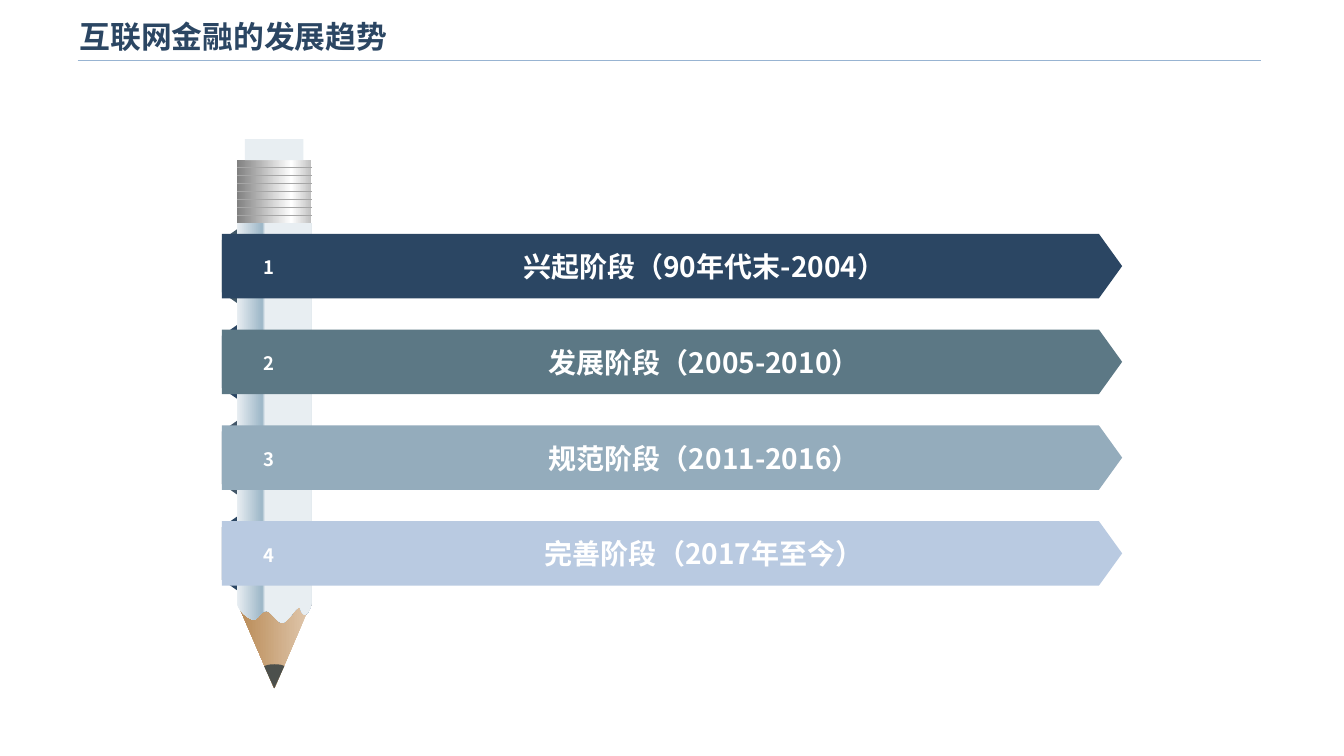
from lxml import etree
from pptx import Presentation
from pptx.dml.color import RGBColor
from pptx.enum.shapes import MSO_CONNECTOR, MSO_SHAPE
from pptx.enum.text import MSO_ANCHOR, MSO_AUTO_SIZE, PP_ALIGN
from pptx.oxml.ns import qn
from pptx.util import Inches, Pt

RECT, PENTAGON, TRAPEZOID = MSO_SHAPE.RECTANGLE, MSO_SHAPE.PENTAGON, MSO_SHAPE.TRAPEZOID
STRAIGHT = MSO_CONNECTOR.STRAIGHT
MIDDLE, LEFT, CENTER = MSO_ANCHOR.MIDDLE, PP_ALIGN.LEFT, PP_ALIGN.CENTER
GROW = MSO_AUTO_SIZE.SHAPE_TO_FIT_TEXT

WHITE = RGBColor(0xFF, 0xFF, 0xFF)
NAVY = RGBColor(0x2B, 0x46, 0x63)
SLATE = RGBColor(0x42, 0x56, 0x68)
DARK_SLATE = RGBColor(0x41, 0x58, 0x67)
TEAL = RGBColor(0x5C, 0x78, 0x85)
STEEL = RGBColor(0x94, 0xAC, 0xBC)
PALE_BLUE = RGBColor(0xB9, 0xCA, 0xE1)
RULE = RGBColor(0x98, 0xB4, 0xD2)
PAINT = RGBColor(0xE8, 0xEE, 0xF2)
SHADE = RGBColor(0x9C, 0xB6, 0xC7)
LIGHT_WOOD = RGBColor(0xE1, 0xC9, 0xAF)
WOOD = RGBColor(0xB8, 0x89, 0x54)
LEAD = RGBColor(0x4C, 0x50, 0x4C)
SILVER = RGBColor(0xBF, 0xBF, 0xBF)
GREY = RGBColor(0x80, 0x80, 0x80)
RIDGE = RGBColor(0xA6, 0xA6, 0xA6)

CJK = "Noto Sans CJK SC"
STAGES = [
    ("兴起阶段（90年代末-2004）", NAVY, DARK_SLATE),
    ("发展阶段（2005-2010）", TEAL, NAVY),
    ("规范阶段（2011-2016）", STEEL, SLATE),
    ("完善阶段（2017年至今）", PALE_BLUE, NAVY),
]


def style(s, color=None):
    s.shadow.inherit = False
    s.line.fill.background()
    if color is not None:
        s.fill.solid()
        s.fill.fore_color.rgb = color


def set_gradient(s, stops, angle):
    """Fill with (percent, colour) stops; the angle runs counter-clockwise."""
    s.fill.gradient()
    s.fill.gradient_angle = angle
    stop_list = next(s.element.iter(qn("a:gsLst")))
    for old in list(stop_list):
        stop_list.remove(old)
    for percent, color in stops:
        stop = etree.SubElement(stop_list, qn("a:gs"), pos=str(percent * 1000))
        etree.SubElement(stop, qn("a:srgbClr"), val=str(color))


def add_shape(slide, kind, box, color=None, rotation=0, adjustment=None):
    s = slide.shapes.add_shape(kind, *map(Inches, box))
    style(s, color)
    s.rotation = rotation
    if adjustment is not None:
        s.adjustments[0] = adjustment
    return s


def add_line(slide, x1, x2, y, color, width):
    line = slide.shapes.add_connector(STRAIGHT, *map(Inches, (x1, y, x2, y)))
    line.line.color.rgb = color
    line.line.width = Pt(width)
    etree.SubElement(line.element.spPr, qn("a:effectLst"))


def add_outline(slide, x, y, segments, color=None):
    """Draw a closed outline; a segment is one point, or three for a curve."""
    points = [segments[0]]
    for segment in segments[1:]:
        if len(segment) == 2:
            points.append(segment)
            continue
        a, (b, c, d) = points[-1], segment
        for t in (i / 8 for i in range(1, 9)):
            u = 1 - t
            points.append(tuple(
                u**3 * a[k] + 3 * u * u * t * b[k] + 3 * u * t * t * c[k] + t**3 * d[k]
                for k in (0, 1)))
    points = [(Inches(x + px), Inches(y + py)) for px, py in points]
    builder = slide.shapes.build_freeform(*points[0])
    builder.add_line_segments(points[1:], close=True)
    s = builder.convert_to_shape()
    style(s, color)
    return s


def write(tf, text, size, color, font, align):
    p = tf.paragraphs[0]
    p.alignment = align
    r = p.add_run()
    r.text = text
    for name, value in dict(size=Pt(size), bold=True, name=font).items():
        setattr(r.font, name, value)
    r.font.color.rgb = color
    etree.SubElement(r.font._element, qn("a:ea"), typeface=CJK)
    return p


def add_label(slide, box, text, size):
    tf = slide.shapes.add_textbox(*map(Inches, box)).text_frame
    tf.word_wrap = True
    tf.auto_size = GROW
    write(tf, text, size, WHITE, CJK, CENTER).line_spacing = 1.2


def add_header(slide, x, y, w, h):
    add_line(slide, x + 0.08, x + 11.82, y + 0.51, RULE, 1)
    title = slide.shapes.title
    title.left, title.top, title.width, title.height = map(Inches, (x, y, w, h))
    tf = title.text_frame
    tf.vertical_anchor = MIDDLE
    write(tf, "互联网金融的发展趋势", 22, NAVY, "Arial", LEFT)


def add_pencil(slide, x, y, w, h):
    mid, cone_h = x + w / 2, 0.86
    cone = add_shape(slide, PENTAGON,
                     (mid - cone_h / 2, y + h - cone_h / 2 - w / 2, cone_h, w),
                     rotation=90, adjustment=cone_h / w)
    set_gradient(cone, [(0, LIGHT_WOOD), (100, WOOD)], 270)

    barrel = add_outline(slide, x, y + 0.83, [
        (0, 0), (w, 0), (w, 3.76),
        ((0.73, 3.85), (0.7, 3.88), (0.67, 3.89)),
        ((0.62, 3.86), (0.64, 3.8), (0.61, 3.82)),
        ((0.57, 3.83), (0.51, 3.96), (0.45, 3.97)),
        ((0.4, 3.97), (0.34, 3.85), (0.29, 3.85)),
        ((0.24, 3.85), (0.2, 3.95), (0.16, 3.94)),
        ((0.08, 3.91), (0.03, 3.85), (0, 3.79)),
    ])
    set_gradient(barrel, [(0, PAINT), (34, SHADE), (38, PAINT), (100, PAINT)], 0)

    ferrule = add_shape(slide, RECT, (x, y + 0.21, w, 0.62))
    set_gradient(ferrule, [(0, SILVER), (27, WHITE), (100, GREY)], 180)
    add_shape(slide, RECT, (x + 0.08, y, w - 0.16, 0.21), PAINT)
    add_outline(slide, mid, y + h, [
        (0, -0.24), ((0.06, -0.24), (0.09, -0.23), (0.1, -0.22)),
        (0, 0), (-0.1, -0.22), ((-0.08, -0.23), (-0.05, -0.24), (0, -0.24)),
    ], LEAD)
    for i in range(7):
        add_line(slide, x, x + w, y + 0.28 + 0.08 * i, RIDGE, 0.5)


def add_stages(slide, x, y, w, h, pitch):
    fold_w, fold_h = 0.73, 0.15
    tops = [y + pitch * i for i in range(len(STAGES))]
    for top, (_, _, fold) in zip(tops, STAGES):
        add_shape(slide, TRAPEZOID,
                  (x + (fold_h - fold_w) / 2, top + (h - fold_h) / 2, fold_w, fold_h),
                  fold, rotation=270, adjustment=0.7)
    for number, (top, (text, color, _)) in enumerate(zip(tops, STAGES), 1):
        add_shape(slide, PENTAGON, (x, top, w, h), color, adjustment=0.36)
        add_label(slide, (x + 1.82, top + 0.04, 5.93, 0.5), text, 20)
        add_label(slide, (x + 0.05, top + 0.13, 0.83, 0.37), str(number), 13.2)


def main():
    prs = Presentation()
    prs.slide_width, prs.slide_height = Inches(13.33), Inches(7.5)
    slide = prs.slides.add_slide(prs.slide_layouts[5])
    add_header(slide, 0.69, 0.09, 10.71, 0.53)
    add_pencil(slide, 2.35, 1.38, 0.74, 5.45)
    add_stages(slide, 2.2, 2.32, 8.93, 0.64, 0.95)
    prs.save("out.pptx")


if __name__ == "__main__":
    main()
